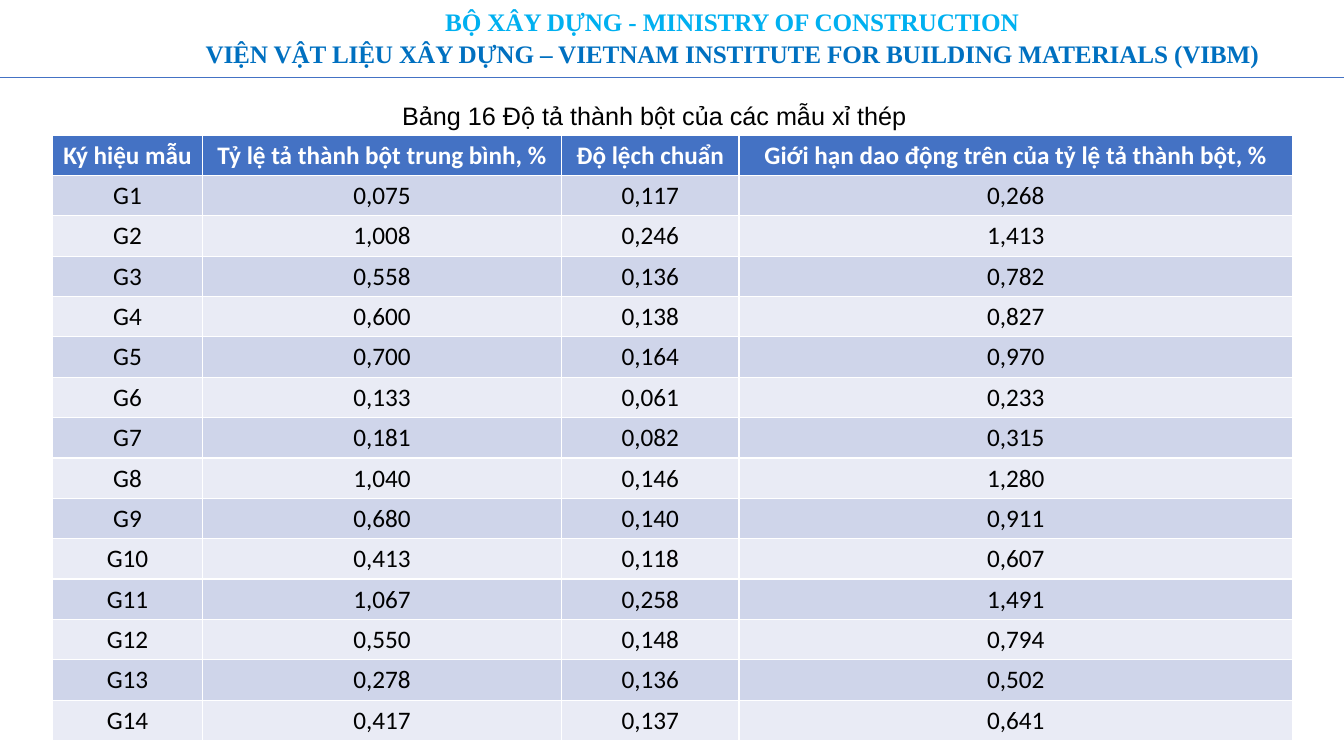
from lxml.etree import SubElement
from pptx import Presentation
from pptx.dml.color import RGBColor
from pptx.enum.shapes import MSO_CONNECTOR
from pptx.enum.text import MSO_ANCHOR, MSO_AUTO_SIZE, PP_ALIGN
from pptx.oxml.ns import qn
from pptx.util import Inches, Pt

COLOURS = {
    "sky": "00B0F0", "blue": "0070C0", "accent": "4472C4", "black": "000000",
    "white": "FFFFFF", "band_dark": "CFD5EA", "band_light": "E9EBF5",
}


def colour(name):
    return RGBColor.from_string(COLOURS[name])


def write(para, text, font_name, colour_name, bold=False):
    para.alignment = PP_ALIGN.CENTER
    span = para.add_run()
    span.text = text
    for key, value in {"name": font_name, "size": Pt(18), "bold": bold}.items():
        setattr(span.font, key, value)
    span.font.color.rgb = colour(colour_name)
    return span


deck = Presentation()
deck.slide_width, deck.slide_height = Inches(13.33), Inches(7.5)
page = deck.slides.add_slide(deck.slide_layouts[5])

# Institution header
header = page.shapes.add_textbox(Inches(1.51), Inches(0), Inches(11.5), Inches(1.01))
header.text_frame.word_wrap = True
header_lines = [
    ("BỘ XÂY DỰNG - MINISTRY OF CONSTRUCTION", "sky"),
    ("VIỆN VẬT LIỆU XÂY DỰNG – VIETNAM INSTITUTE FOR BUILDING MATERIALS (VIBM)", "blue"),
]
for index, (text, shade) in enumerate(header_lines):
    para = header.text_frame.add_paragraph() if index else header.text_frame.paragraphs[0]
    para.line_spacing = 1.05
    span = write(para, text, "Times New Roman", shade, bold=True)
    span.font._element.set("spc", "-10")

# Rule under the header
rule = page.shapes.add_connector(
    MSO_CONNECTOR.STRAIGHT, Inches(0), Inches(0.77), Inches(13.33), Inches(0.77))
rule.line.color.rgb = colour("accent")
rule.line.width = Pt(0.5)
SubElement(rule._element.spPr, qn("a:effectLst"))

# Table caption as the slide title
caption = page.shapes.title
caption.left, caption.top = Inches(0), Inches(0.94)
caption.width, caption.height = Inches(12.98), Inches(0.4)
frame_format = {"word_wrap": True, "auto_size": MSO_AUTO_SIZE.NONE,
                "vertical_anchor": MSO_ANCHOR.TOP}
for key, value in frame_format.items():
    setattr(caption.text_frame, key, value)
write(caption.text_frame.paragraphs[0],
      "Bảng 16 Độ tả thành bột của các mẫu xỉ thép", "Arial", "black")

# Disintegration table: mean, standard deviation, upper limit
headings = ["Ký hiệu mẫu", "Tỷ lệ tả thành bột trung bình, %", "Độ lệch chuẩn",
            "Giới hạn dao động trên của tỷ lệ tả thành bột, %"]
measurements = [
    ("0,075", "0,117", "0,268"),
    ("1,008", "0,246", "1,413"),
    ("0,558", "0,136", "0,782"),
    ("0,600", "0,138", "0,827"),
    ("0,700", "0,164", "0,970"),
    ("0,133", "0,061", "0,233"),
    ("0,181", "0,082", "0,315"),
    ("1,040", "0,146", "1,280"),
    ("0,680", "0,140", "0,911"),
    ("0,413", "0,118", "0,607"),
    ("1,067", "0,258", "1,491"),
    ("0,550", "0,148", "0,794"),
    ("0,278", "0,136", "0,502"),
    ("0,417", "0,137", "0,641"),
]
rows = [headings] + [(f"G{number}", *values)
                     for number, values in enumerate(measurements, start=1)]
table = page.shapes.add_table(len(rows), len(headings), Inches(0.52), Inches(1.34),
                              Inches(12.3), Inches(6)).table
for column, width in zip(table.columns, (1.49, 3.56, 1.76, 5.49)):
    column.width = Inches(width)
for row_index, values in enumerate(rows):
    is_heading = row_index == 0
    band = "accent" if is_heading else ("band_light", "band_dark")[row_index % 2]
    for column_index, text in enumerate(values):
        cell = table.cell(row_index, column_index)
        cell.fill.solid()
        cell.fill.fore_color.rgb = colour(band)
        write(cell.text_frame.paragraphs[0], text, "Calibri",
              "white" if is_heading else "black", bold=is_heading)

deck.save("out.pptx")
